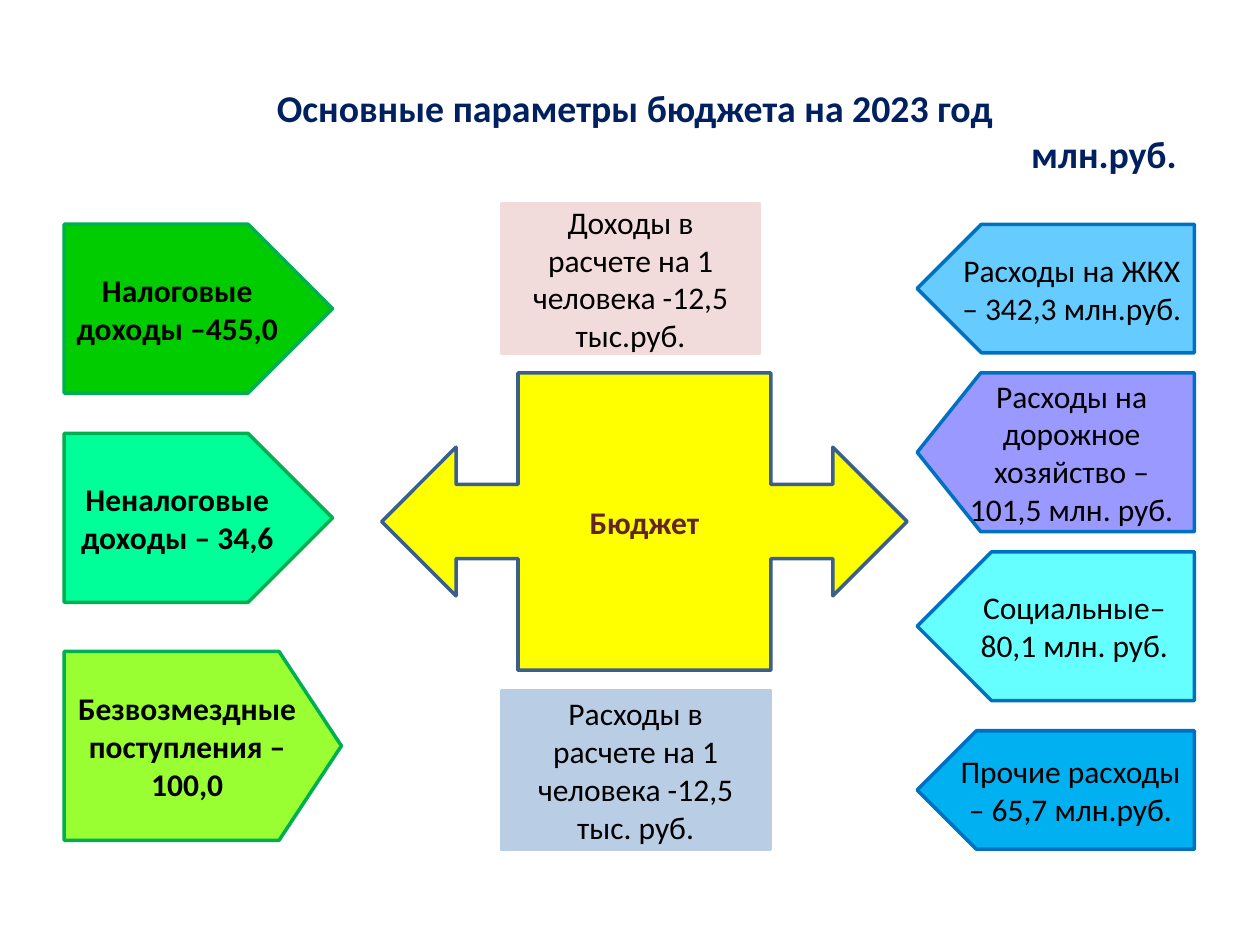
from dataclasses import dataclass

from pptx import Presentation
from pptx.dml.color import RGBColor
from pptx.enum.shapes import MSO_SHAPE as Shape
from pptx.enum.text import MSO_ANCHOR as Anchor, MSO_AUTO_SIZE as AutoSize, PP_ALIGN as Align
from pptx.util import Inches, Pt


@dataclass(frozen=True)
class Theme:
    font: str = "Calibri"
    title_size: float = 21.6
    text_size: float = 18
    line_width: float = 2
    title: str = "002060"
    text: str = "000000"
    income_line: str = "00B050"
    expense_line: str = "0070C0"
    budget_fill: str = "FFFF00"
    budget_line: str = "3A5F8C"
    budget_text: str = "632523"
    income_note: str = "F2DCDB"
    expense_note: str = "B9CDE5"


THEME = Theme()

# top, width, height, point depth, fill, text
INCOMES = [
    (1.78, 2.13, 1.34, 0.5, "00CC00", "Налоговые доходы –455,0"),
    (3.44, 2.13, 1.34, 0.5, "00FF99", "Неналоговые доходы – 34,6"),
    (5.17, 2.2, 1.5, 0.33, "99FF33", "Безвозмездные поступления – 100,0"),
]
# top, height, point depth, fill, text
EXPENSES = [
    (1.78, 1.02, 0.5, "66CCFF", "Расходы на ЖКХ – 342,3 млн.руб."),
    (2.96, 1.26, 0.4, "9999FF", "Расходы на дорожное хозяйство – 101,5 млн. руб."),
    (4.38, 1.18, 0.5, "66FFFF", "Социальные– 80,1 млн. руб."),
    (5.8, 0.94, 0.5, "00B0F0", "Прочие расходы – 65,7 млн.руб."),
]


def add_text(para, text, *, size=THEME.text_size, color=THEME.text, bold=False, align=Align.CENTER):
    para.alignment = align
    span = para.add_run()
    span.text = text
    font = span.font
    font.name, font.size, font.bold = THEME.font, Pt(size), bold
    font.color.rgb = RGBColor.from_string(color)


def add_block(page, kind, box, text, *, fill, line, **text_format):
    """Add a filled, outlined shape with centred text; box is in inches."""
    block = page.shapes.add_shape(kind, *map(Inches, box))
    block.shadow.inherit = False
    block.fill.solid()
    block.fill.fore_color.rgb = RGBColor.from_string(fill)
    block.line.color.rgb = RGBColor.from_string(line)
    block.line.width = Pt(THEME.line_width)
    frame = block.text_frame
    frame.word_wrap = True
    frame.vertical_anchor = Anchor.MIDDLE
    add_text(frame.paragraphs[0], text, **text_format)
    return block


def fill_title(page, box):
    title = page.shapes.title
    title.left, title.top, title.width, title.height = map(Inches, box)
    frame = title.text_frame
    frame.auto_size = AutoSize.NONE
    frame.word_wrap = True
    frame.vertical_anchor = Anchor.MIDDLE
    frame.margin_left = frame.margin_right = Inches(0.24)
    style = dict(size=THEME.title_size, color=THEME.title, bold=True)
    add_text(frame.paragraphs[0], "Основные параметры бюджета на 2023 год", **style)
    add_text(frame.add_paragraph(), "млн.руб.", align=Align.RIGHT, **style)


def add_incomes(page, left):
    for top, width, height, depth, fill, text in INCOMES:
        arrow = add_block(page, Shape.PENTAGON, (left, top, width, height), text,
                          fill=fill, line=THEME.income_line, bold=True)
        arrow.adjustments[0] = depth


def add_expenses(page, left, width):
    """Add the column of arrows that point left."""
    for top, height, depth, fill, text in EXPENSES:
        arrow = add_block(page, Shape.PENTAGON, (left, top, width, height), text,
                          fill=fill, line=THEME.expense_line)
        arrow.adjustments[0] = depth
        arrow._element.spPr.xfrm.set("flipH", "1")


def add_budget(page, left, top):
    """Add the central double arrow with the per-person notes above and below."""
    add_block(page, Shape.LEFT_RIGHT_ARROW_CALLOUT, (left, top, 4.17, 2.36), "Бюджет",
              fill=THEME.budget_fill, line=THEME.budget_line, color=THEME.budget_text, bold=True)
    note_left = left + 0.95
    add_block(page, Shape.RECTANGLE, (note_left, top - 1.34, 2.05, 1.18),
              "Доходы в расчете на 1 человека -12,5 тыс.руб.",
              fill=THEME.income_note, line=THEME.income_note)
    add_block(page, Shape.RECTANGLE, (note_left, top + 2.52, 2.13, 1.26),
              "Расходы в расчете на 1 человека -12,5 тыс. руб.",
              fill=THEME.expense_note, line=THEME.expense_note)


def main():
    deck = Presentation()
    deck.slide_width, deck.slide_height = Inches(10), Inches(7.5)
    title_only = deck.slide_layouts[5]
    page = deck.slides.add_slide(title_only)
    fill_title(page, (0.5, 0.68, 9.08, 0.71))
    add_incomes(page, left=0.51)
    add_budget(page, left=3.03, top=2.96)
    add_expenses(page, left=7.28, width=2.2)
    deck.save("out.pptx")


if __name__ == "__main__":
    main()
